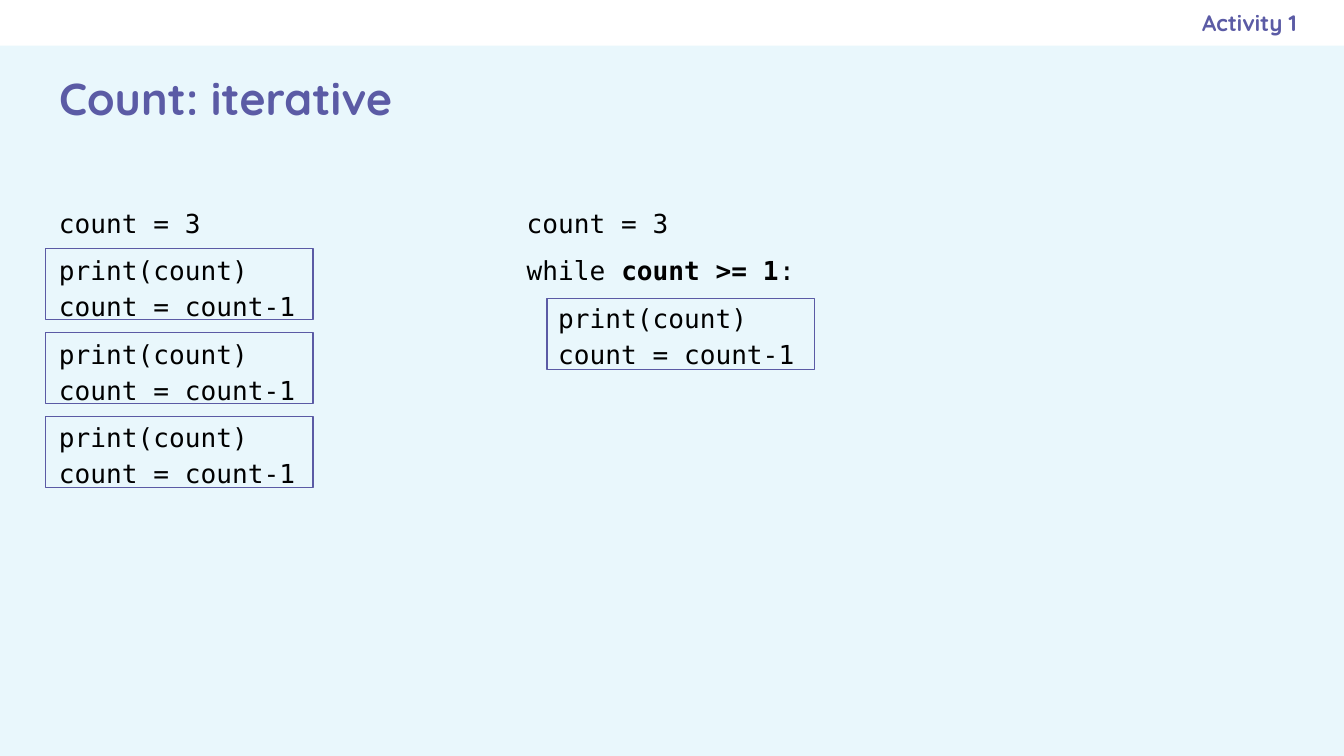
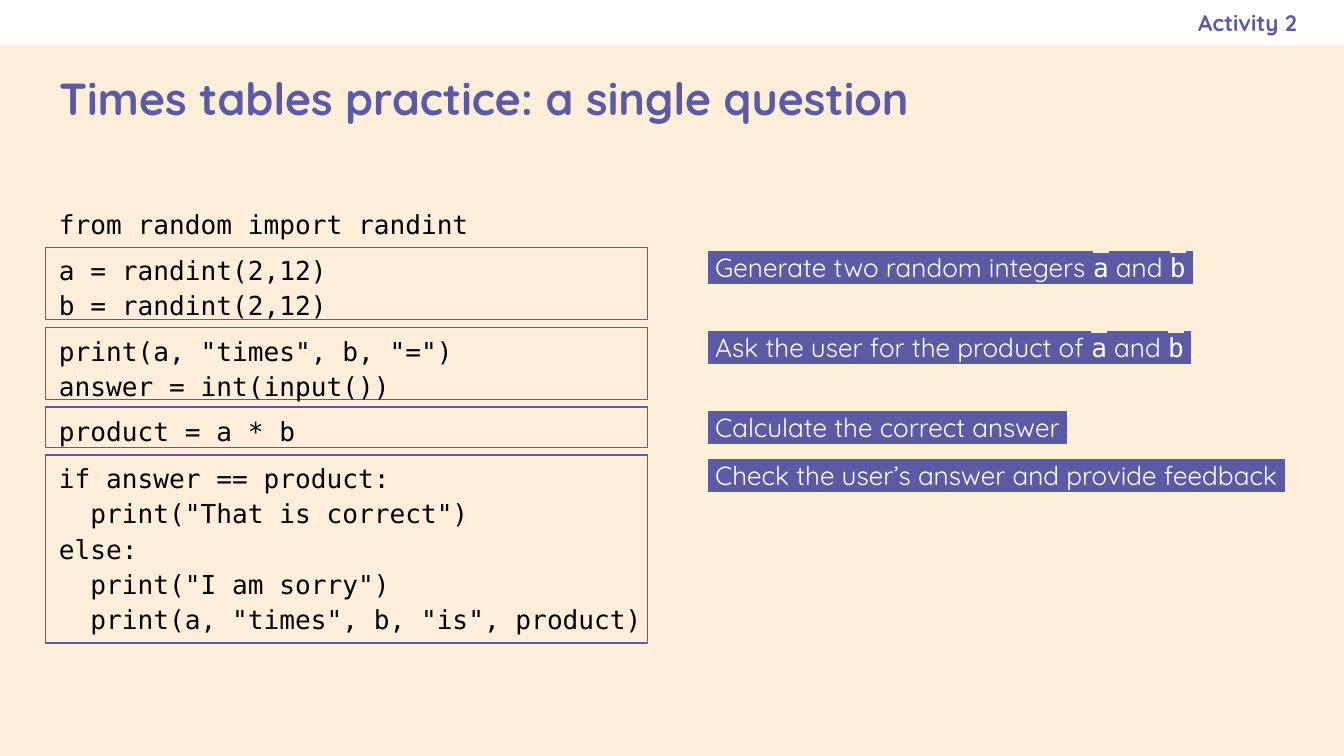
from lxml.etree import SubElement as Sub
from pptx import Presentation
from pptx.dml.color import RGBColor as Rgb
from pptx.enum.shapes import MSO_SHAPE as Kind
from pptx.enum.text import MSO_ANCHOR as Anchor, MSO_AUTO_SIZE as Fit, PP_ALIGN as Align
from pptx.oxml.ns import qn
from pptx.util import Inches, Pt

HUE = {"ink": "5B5BA5", "code": "000000", "white": "FFFFFF",
       "blue": "E9F7FC", "cream": "FFEFDA"}
SANS, MONO = "Quicksand", "DejaVu Sans Mono"

# The grid has square cells, 100 columns by 56.25 rows
CELL = Inches(0.1)
COLS, ROWS = 100, 56.25
EDGE, BAND = 3.4, 3.4
PAD = 1


def cells(*nums):
    return [round(n * CELL) for n in nums]


def rgb(name):
    return Rgb.from_string(HUE[name])


def style(font, size, face, hue, bold=False):
    font.size, font.name, font.bold = Pt(size), face, bold
    font.color.rgb = rgb(hue)


def setup(frame, pads, anchor=Anchor.TOP):
    """Set the insets (left, top, right, bottom) and wrapping of a text frame."""
    frame.word_wrap, frame.auto_size = True, Fit.NONE
    frame.vertical_anchor = anchor
    (frame.margin_left, frame.margin_top,
     frame.margin_right, frame.margin_bottom) = cells(*pads)


def rect(slide, box, fill=None, line=None):
    shape = slide.shapes.add_shape(Kind.RECTANGLE, *cells(*box))
    shape.shadow.inherit = False
    if fill:
        shape.fill.solid()
        shape.fill.fore_color.rgb = rgb(fill)
    else:
        shape.fill.background()
    if line:
        shape.line.color.rgb = rgb(line)
        shape.line.width = Pt(0.75)
    else:
        shape.line.fill.background()
    return shape


def label(holder, box, text, size, align, pads):
    """Move a placeholder into its box and fill it with one heading."""
    holder.left, holder.top, holder.width, holder.height = cells(*box)
    setup(holder.text_frame, pads, Anchor.MIDDLE)
    par = holder.text_frame.paragraphs[0]
    par.text, par.alignment, par.space_before = text, align, Pt(0)
    style(par.font, size, SANS, "ink", True)


def page(deck, back, title, tag):
    """Start a slide: background, top band, title and activity tag."""
    slide = deck.slides.add_slide(deck.slide_layouts[0])
    slide.background.fill.solid()
    slide.background.fill.fore_color.rgb = rgb(back)
    band = rect(slide, (0, 0, COLS, BAND), "white")
    slide.shapes.element.insert(2, band.element)  # send to back
    label(slide.shapes.title, (EDGE, BAND, COLS - 2 * EDGE, 7.7),
          title, 24, Align.LEFT, (PAD,) * 4)
    label(slide.placeholders[1], (57.5, 0, 39, BAND),
          tag, 12, Align.RIGHT, (PAD, PAD, 0, PAD))
    return slide


def code(slide, box, blocks, lead):
    """Write blocks of code with a small gap between; ** marks bold."""
    frame = slide.shapes.add_textbox(*cells(*box)).text_frame
    setup(frame, (PAD,) * 4)
    par = frame.paragraphs[0]
    for b, block in enumerate(blocks):
        for n, line in enumerate(block.split("\n")):
            if b or n:
                par = frame.add_paragraph()
            par.line_spacing = lead
            par.space_before = Pt(6 if b and not n else 0)
            style(par.font, 14, MONO, "code")
            for i, part in enumerate(line.split("**")):
                run = par.add_run()
                run.text = part
                if i % 2:
                    run.font.bold = True


def note(slide, box, text):
    """Write a highlighted remark; backticks mark code."""
    frame = slide.shapes.add_textbox(*cells(*box)).text_frame
    setup(frame, (PAD, 0, 0.2, 0))
    par = frame.paragraphs[0]
    par.line_spacing = 1.13
    parts = f" {text} ".split("`") + ["."]
    for i, part in enumerate(parts):
        run = par.add_run()
        run.text = part
        last = i == len(parts) - 1
        style(run.font, 14, MONO if i % 2 and not last else SANS, "white")
        if not last:
            props = run._r.get_or_add_rPr()
            mark = Sub(props, qn("a:highlight"))
            Sub(mark, qn("a:srgbClr"), val=HUE["ink"])
            props.find(qn("a:solidFill")).addnext(mark)


def count(deck):
    """Repeated code on the left, the same as a loop on the right."""
    slide = page(deck, "blue", "Count: iterative", "Activity 1")
    wide, high, top = 19.9, 5.3, 14.1
    body = "print(count)\ncount = count-1"

    # Unrolled steps
    code(slide, (EDGE, top, 23.6, 22.2), ["count = 3"] + [body] * 3, 1.15)
    for i in range(3):
        rect(slide, (EDGE, top + 4.4 + 6.25 * i, wide, high), line="ink")

    # While loop
    left = 38.2
    inner = "\n".join("  " + line for line in body.split("\n"))
    code(slide, (left, top, 23.6, 14),
         ["count = 3", "while **count >= 1**:", inner], 1.15)
    rect(slide, (left + 2.5, top + 8.1, wide, high), line="ink")


STEPS = [  # rows, code, remark
    (5.4, "a = randint(2,12)\nb = randint(2,12)",
     "Generate two random integers `a` and `b`"),
    (5.4, 'print(a, "times", b, "=")\nanswer = int(input())',
     "Ask the user for the product of `a` and `b`"),
    (3, "product = a * b", "Calculate the correct answer"),
    (14, 'if answer == product:\n  print("That is correct")\nelse:\n'
         '  print("I am sorry")\n  print(a, "times", b, "is", product)',
     "Check the user’s answer and provide feedback"),
]


def times(deck):
    """Framed steps of a program, each with its remark."""
    slide = page(deck, "cream", "Times tables practice: a single question",
                 "Activity 2")
    wide, top, gap = 44.8, 18.4, 0.55
    for i, (high, text, remark) in enumerate(STEPS):
        rect(slide, (EDGE, top, wide, high), line="ink")
        # The first step shares its text box with the import line
        rise = 0.7 if i else 4.2
        blocks = [text] if i else ["from random import randint", text]
        code(slide, (EDGE, top - rise, 46, high + rise + 1), blocks, 1.12)
        note(slide, (51.7, top, wide, 2.4), remark)
        top += high + gap


def main():
    deck = Presentation()
    deck.slide_width, deck.slide_height = cells(COLS, ROWS)
    count(deck)
    times(deck)
    deck.save("out.pptx")


if __name__ == "__main__":
    main()
